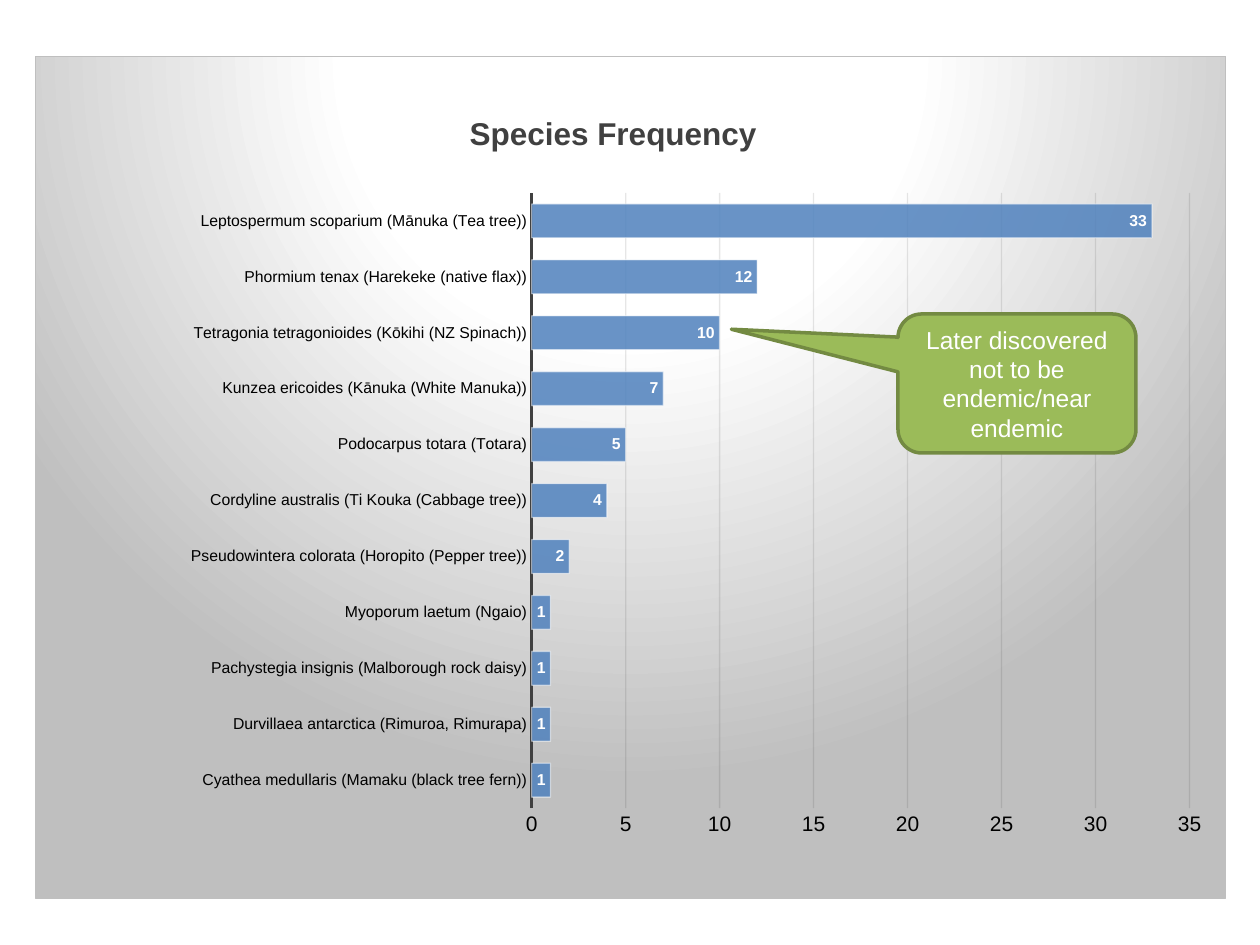
from lxml import etree
from pptx import Presentation
from pptx.chart.data import CategoryChartData
from pptx.dml.color import RGBColor
from pptx.enum.chart import XL_CHART_TYPE, XL_LABEL_POSITION, XL_TICK_MARK
from pptx.enum.shapes import MSO_SHAPE
from pptx.enum.text import MSO_ANCHOR, PP_ALIGN
from pptx.oxml import parse_xml
from pptx.oxml.ns import nsdecls, qn
from pptx.util import Pt

BAR = XL_CHART_TYPE.BAR_CLUSTERED
INSIDE_END = XL_LABEL_POSITION.INSIDE_END
NO_TICK = XL_TICK_MARK.NONE
CALLOUT = MSO_SHAPE.ROUNDED_RECTANGULAR_CALLOUT
MIDDLE = MSO_ANCHOR.MIDDLE
CENTER = PP_ALIGN.CENTER

PX_PER_INCH = 126
EMU_PER_PX = 914400 / PX_PER_INCH
FONT = "Arial"
COLORS = {
    "white": "FFFFFF", "black": "000000", "silver": "BFBFBF", "charcoal": "404040",
    "grid": "0D0D0D", "blue": "4F81BD", "green": "9BBB59", "dark_green": "738A42",
}
SPECIES = [
    ("Cyathea medullaris (Mamaku (black tree fern))", 1),
    ("Durvillaea antarctica (Rimuroa, Rimurapa)", 1),
    ("Pachystegia insignis (Malborough rock daisy)", 1),
    ("Myoporum laetum (Ngaio)", 1),
    ("Pseudowintera colorata (Horopito (Pepper tree))", 2),
    ("Cordyline australis (Ti Kouka (Cabbage tree))", 4),
    ("Podocarpus totara (Totara)", 5),
    ("Kunzea ericoides (Kānuka (White Manuka))", 7),
    ("Tetragonia tetragonioides (Kōkihi (NZ Spinach))", 10),
    ("Phormium tenax (Harekeke (native flax))", 12),
    ("Leptospermum scoparium (Mānuka (Tea tree))", 33),
]


class SlideBuilder:
    """Hold the style and the current slide, and draw its elements."""

    def __init__(self, width, height):
        self.presentation = Presentation()
        self.presentation.slide_width = self.emu(width)
        self.presentation.slide_height = self.emu(height)
        self.slide = self.presentation.slides.add_slide(self.presentation.slide_layouts[6])

    def emu(self, px):
        return round(px * EMU_PER_PX)

    def box(self, *lengths):
        return [self.emu(length) for length in lengths]

    def color(self, name):
        return RGBColor.from_string(COLORS[name])

    def assign(self, target, values):
        for name, value in values.items():
            setattr(target, name, value)

    def style_font(self, font, size, color, bold=False):
        self.assign(font, {"name": FONT, "size": Pt(size), "bold": bold})
        font.color.rgb = self.color(color)

    def paint(self, fill, color, alpha=100):
        fill.solid()
        fill.fore_color.rgb = self.color(color)
        if alpha < 100:
            for element in fill._xPr.iter(qn("a:srgbClr")):
                etree.SubElement(element, qn("a:alpha"), val=str(alpha * 1000))

    def outline(self, line, color, width, alpha=100):
        line.width = Pt(width)
        self.paint(line.fill, color, alpha)

    def layout(self, x, y, width=None, height=None):
        values = {"xMode": "edge", "yMode": "edge", "x": x, "y": y, "w": width, "h": height}
        if width is not None:
            values = {"layoutTarget": "inner", **values}
        items = "".join(f'<c:{key} val="{value}"/>' for key, value in values.items()
                        if value is not None)
        return parse_xml(f'<c:layout {nsdecls("c")}><c:manualLayout>{items}'
                         '</c:manualLayout></c:layout>')

    def chart(self, box, title, records):
        data = CategoryChartData()
        data.categories = [name for name, _ in records]
        data.add_series("Series 1", [count for _, count in records])
        chart = self.slide.shapes.add_chart(BAR, *self.box(*box), data).chart
        chart.has_legend = False
        self.style_font(chart.font, 10, "black")
        self.chart_title(chart, title)
        self.chart_axes(chart)
        self.chart_bars(chart.plots[0])
        self.chart_background(chart)

    def chart_title(self, chart, text):
        chart.has_title = True
        title = chart.chart_title
        title.include_in_layout = False
        title.text_frame.text = text
        self.style_font(title.text_frame.paragraphs[0].runs[0].font, 18, "charcoal", True)
        element = title._element
        for old in element.findall(qn("c:layout")):
            element.remove(old)
        element.find(qn("c:tx")).addnext(self.layout(0.36, 0.06))

    def chart_axes(self, chart):
        ticks = {"major_tick_mark": NO_TICK, "minor_tick_mark": NO_TICK}
        category, value = chart.category_axis, chart.value_axis
        for axis, size in ((category, 9), (value, 12)):
            self.assign(axis, ticks)
            self.style_font(axis.tick_labels.font, size, "black")
        self.outline(category.format.line, "charcoal", 1.5)
        value.format.line.fill.background()
        self.assign(value, {"minimum_scale": 0, "maximum_scale": 35, "major_unit": 5,
                            "has_major_gridlines": True})
        self.outline(value.major_gridlines.format.line, "grid", 0.75, 10)

    def chart_bars(self, plot):
        self.assign(plot, {"gap_width": 65, "vary_by_categories": False,
                           "has_data_labels": True})
        self.assign(plot.data_labels, {"show_value": True, "position": INSIDE_END})
        self.style_font(plot.data_labels.font, 9, "white", True)
        bars = plot.series[0].format
        self.paint(bars.fill, "blue", 85)
        self.outline(bars.line, "white", 0.75, 50)

    def chart_background(self, chart):
        plot_area = chart._chartSpace.chart.plotArea
        for old in plot_area.findall(qn("c:layout")):
            plot_area.remove(old)
        plot_area.insert(0, self.layout(0.417, 0.162, 0.553, 0.731))
        stops = "".join(
            f'<a:gs pos="{position * 1000}"><a:srgbClr val="{COLORS[name]}"/></a:gs>'
            for position, name in ((0, "white"), (39, "white"), (100, "silver")))
        chart._chartSpace.chart.addnext(parse_xml(
            f'<c:spPr {nsdecls("c", "a")}><a:gradFill><a:gsLst>{stops}</a:gsLst>'
            '<a:path path="circle"><a:fillToRect l="50000" t="-80000" r="50000" b="180000"/>'
            f'</a:path></a:gradFill><a:ln w="{Pt(0.75)}"><a:solidFill>'
            f'<a:srgbClr val="{COLORS["silver"]}"/></a:solidFill></a:ln></c:spPr>'))

    def callout(self, box, text, adjustments):
        shape = self.slide.shapes.add_shape(CALLOUT, *self.box(*box))
        shape.shadow.inherit = False
        for index, value in enumerate(adjustments):
            shape.adjustments[index] = value
        self.paint(shape.fill, "green")
        self.outline(shape.line, "dark_green", 2)
        self.assign(shape.text_frame, {"word_wrap": True, "vertical_anchor": MIDDLE})
        paragraph = shape.text_frame.paragraphs[0]
        paragraph.alignment = CENTER
        run = paragraph.add_run()
        run.text = text
        self.style_font(run.font, 14, "white")


def main():
    builder = SlideBuilder(1260, 945)
    builder.chart((35, 56, 1191, 843), "Species Frequency", SPECIES)
    builder.callout((898, 314, 238, 139), "Later discovered not to be endemic/near endemic",
                    (-1.2, -0.39, 0.17))
    builder.presentation.save("out.pptx")


if __name__ == "__main__":
    main()
